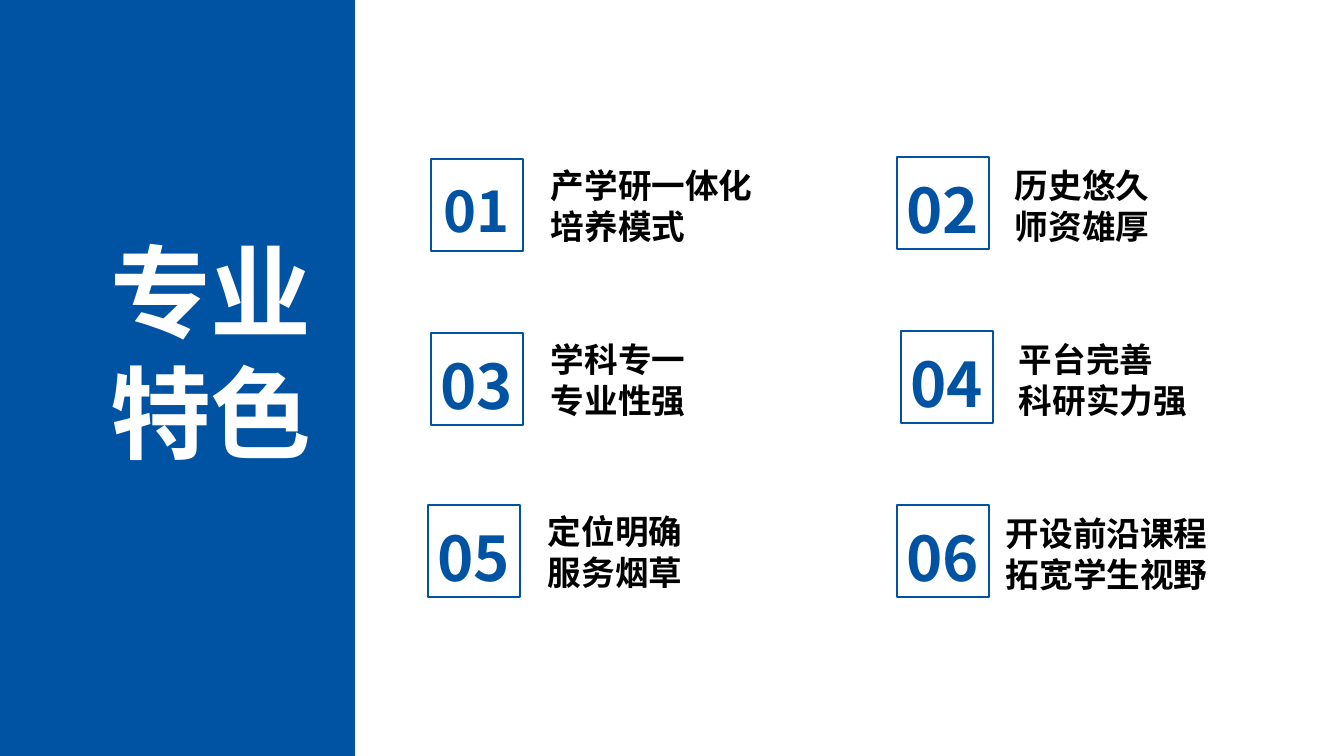
from lxml.etree import SubElement
from pptx import Presentation
from pptx.dml.color import RGBColor
from pptx.enum.shapes import MSO_SHAPE
from pptx.enum.text import MSO_ANCHOR, MSO_AUTO_SIZE, PP_ALIGN
from pptx.oxml.ns import qn
from pptx.util import Emu, Pt

FONT = "Noto Sans CJK SC"
BLUE = "0053A3"


def px(*lengths):
    return [Emu(round(n * 914400 / 100.8)) for n in lengths]


def write(shape, text, size, color, align=PP_ALIGN.LEFT):
    tf = shape.text_frame
    tf.word_wrap = True
    tf.auto_size = MSO_AUTO_SIZE.NONE
    tf.vertical_anchor = MSO_ANCHOR.TOP
    tf.margin_left = tf.margin_right = Pt(7.2)
    tf.margin_top = Pt(3.6 + size * 0.1)
    tf.margin_bottom = 0
    for i, line in enumerate(text.split("\n")):
        p = tf.paragraphs[0] if i == 0 else tf.add_paragraph()
        p.alignment = align
        p.line_spacing = Pt(round(size * 1.2, 1))
        p.space_before = p.space_after = Pt(0)
        r = p.add_run()
        r.text = line
        r.font.size = Pt(size)
        r.font.bold = True
        r.font.name = FONT
        r.font.color.rgb = RGBColor.from_string(color)
        SubElement(r._r.get_or_add_rPr(), qn("a:ea"), typeface=FONT)


prs = Presentation()
prs.slide_width, prs.slide_height = px(1344, 756)
s = prs.slides.add_slide(prs.slide_layouts[5])

title = s.shapes.title
title.left, title.top, title.width, title.height = px(78, 215, 266, 254)
write(title, "专业特色", 72, "FFFFFF", PP_ALIGN.CENTER)

panel = s.shapes.add_shape(MSO_SHAPE.RECTANGLE, *px(0, 0, 355, 756))
panel.shadow.inherit = False
panel.fill.solid()
panel.fill.fore_color.rgb = RGBColor.from_string(BLUE)
panel.line.fill.background()
title.element.addprevious(panel.element)

SIDE = 92
features = [
    ("01", 40, 431, 159, 541, 157, "产学研一体化\n培养模式"),
    ("02", 44, 897, 157, 1005, 157, "历史悠久\n师资雄厚"),
    ("03", 44, 431, 333, 541, 331, "学科专一\n专业性强"),
    ("04", 44, 901, 331, 1009, 331, "平台完善\n科研实力强"),
    ("05", 44, 428, 505, 538, 503, "定位明确\n服务烟草"),
    ("06", 44, 897, 505, 996, 505, "开设前沿课程\n拓宽学生视野"),
]
for number, size, x, y, text_x, text_y, text in features:
    group = s.shapes.add_group_shape()
    label = group.shapes.add_textbox(*px(text_x, text_y, 264, 92))
    write(label, text, 24, "000000")

    w, h = (92, 78) if size == 40 else (98, 84)
    digits = group.shapes.add_textbox(*px(x + (SIDE - w) // 2, y + (SIDE - h) // 2, w, h))
    write(digits, number, size, BLUE, PP_ALIGN.CENTER)

    square = group.shapes.add_shape(MSO_SHAPE.RECTANGLE, *px(x, y, SIDE, SIDE))
    square.shadow.inherit = False
    square.fill.background()
    square.line.color.rgb = RGBColor.from_string(BLUE)
    square.line.width = Pt(1)

prs.save("out.pptx")
